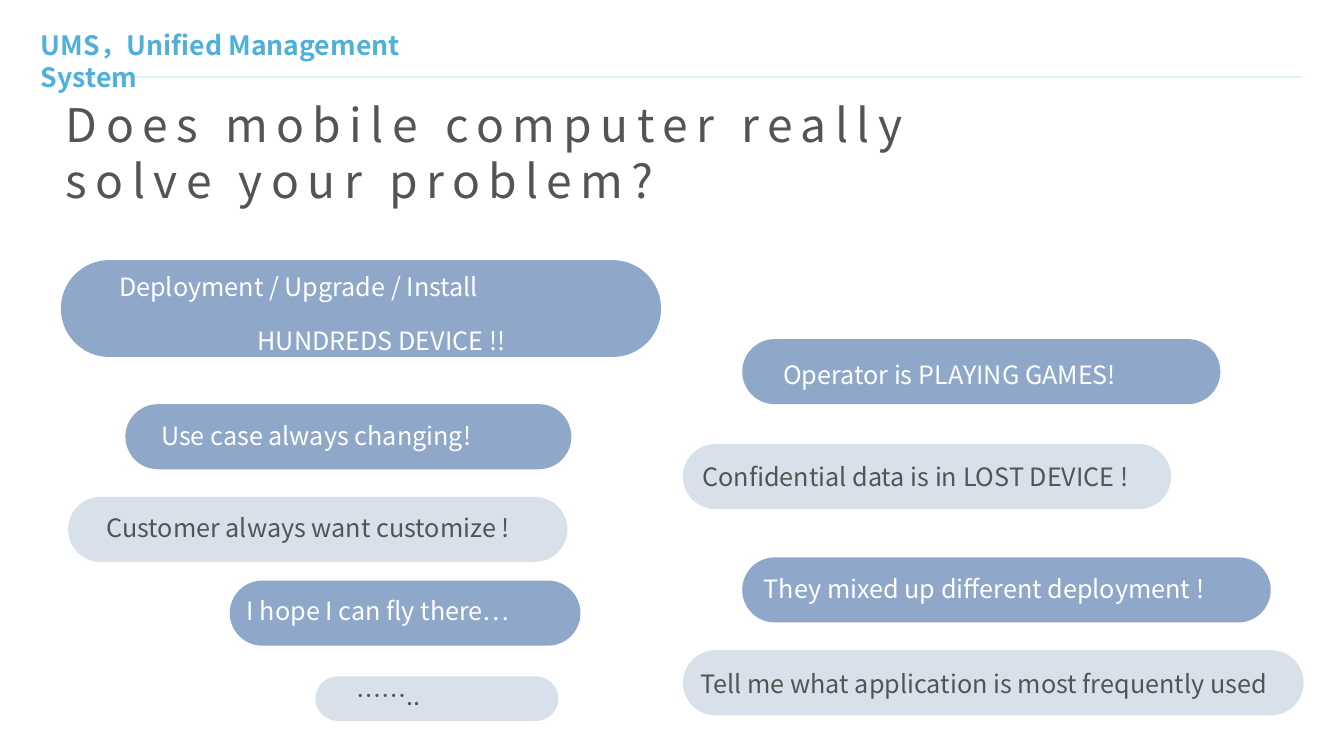
from dataclasses import dataclass
from typing import Optional

from lxml import etree
from pptx import Presentation
from pptx.dml.color import RGBColor
from pptx.enum.shapes import MSO_CONNECTOR, MSO_SHAPE
from pptx.enum.text import MSO_ANCHOR, PP_ALIGN
from pptx.oxml.ns import qn
from pptx.util import Cm, Pt

PILL_SHAPE = MSO_SHAPE.ROUNDED_RECTANGLE
STRAIGHT = MSO_CONNECTOR.STRAIGHT
LEFT, CENTER = PP_ALIGN.LEFT, PP_ALIGN.CENTER
TOP, MIDDLE = MSO_ANCHOR.TOP, MSO_ANCHOR.MIDDLE

FONT = "Noto Sans CJK SC"
BLUE, PALE = "8FA7C9", "D8E1EA"
WHITE, GRAY = "FFFFFF", "545454"
HEADER_BLUE, RULE_BLUE = "50B0DA", "E2F2FA"
PILL_HEIGHT, LABEL_HEIGHT = 3.28, 1.8
LABEL_SIZE = 36
INDENT = 0.76


@dataclass
class Box:
    """A frame measured in centimetres."""
    left: float
    top: float
    width: float
    height: float = PILL_HEIGHT

    def lengths(self) -> tuple:
        return Cm(self.left), Cm(self.top), Cm(self.width), Cm(self.height)


@dataclass
class Complaint:
    lines: list[str]
    fill: str
    pill: Box
    label: Optional[Box] = None  # without one, the text sits in the pill
    indent: float = 0


COMPLAINTS = [
    Complaint(["Deployment / Upgrade / Install", "HUNDREDS DEVICE !!"], BLUE,
              Box(3.07, 13.11, 30.25, 4.88), Box(5.05, 13.56, 28.35, 3.61), 0.7),
    Complaint(["Confidential data is in LOST DEVICE !"], PALE,
              Box(34.42, 22.38, 24.61), indent=0.25),
    Complaint(["Use case always changing!"], BLUE,
              Box(6.32, 20.37, 22.48), Box(7.11, 21.06, 23.8, LABEL_HEIGHT), INDENT),
    Complaint(["Customer always want customize !"], PALE,
              Box(3.43, 25.04, 25.17), Box(5.11, 25.7, 26.37, LABEL_HEIGHT)),
    Complaint(["…….."], PALE,
              Box(15.9, 34.09, 12.24, 2.24), Box(16.94, 34.14, 14.53, 1.52), INDENT),
    Complaint(["They mixed up different deployment !"], BLUE,
              Box(37.41, 28.09, 26.64), Box(37.49, 28.78, 31.19, LABEL_HEIGHT), INDENT),
    Complaint(["Operator is PLAYING GAMES!"], BLUE,
              Box(37.41, 17.09, 24.1), Box(39.22, 17.98, 29.41, LABEL_HEIGHT)),
    Complaint(["I hope I can fly there…"], BLUE,
              Box(11.58, 29.26, 17.68), Box(12.19, 29.9, 18.72, LABEL_HEIGHT)),
    Complaint(["Tell me what application is most frequently used"], PALE,
              Box(34.42, 32.77, 31.29), Box(35.05, 33.58, 32.79, LABEL_HEIGHT)),
]


def color(hex_value: str) -> RGBColor:
    return RGBColor.from_string(hex_value)


def write(shape, lines: list[str], size: float, text_color: str, bold: bool = False,
          indent: float = 0, anchor=TOP, tracking: float = 0) -> None:
    """Fill a shape with text; any line after the first is centred."""
    text_frame = shape.text_frame
    text_frame.text = "\n".join(lines)
    text_frame.word_wrap = True
    text_frame.vertical_anchor = anchor
    for index, paragraph in enumerate(text_frame.paragraphs):
        paragraph.alignment = CENTER if index else LEFT
        if index:
            paragraph.space_before = Pt(34)
        elif indent:
            paragraph._p.get_or_add_pPr().set("marL", str(Cm(indent)))
        for run in paragraph.runs:
            run.font.name = FONT
            run.font.size = Pt(size)
            run.font.bold = bold
            run.font.color.rgb = color(text_color)
            if tracking:
                run._r.get_or_add_rPr().set("spc", str(round(tracking * 100)))


def add_pill(shapes, box: Box, fill: str):
    pill = shapes.add_shape(PILL_SHAPE, *box.lengths())
    pill.adjustments[0] = 0.5
    pill.shadow.inherit = False
    pill.fill.solid()
    pill.fill.fore_color.rgb = color(fill)
    pill.line.fill.background()
    return pill


def add_complaint(slide, complaint: Complaint) -> None:
    text_color = WHITE if complaint.fill == BLUE else GRAY
    if complaint.label is None:
        target, anchor = add_pill(slide.shapes, complaint.pill, complaint.fill), MIDDLE
    else:
        group = slide.shapes.add_group_shape()
        add_pill(group.shapes, complaint.pill, complaint.fill)
        target, anchor = group.shapes.add_textbox(*complaint.label.lengths()), TOP
    write(target, complaint.lines, LABEL_SIZE, text_color,
          indent=complaint.indent, anchor=anchor)


def add_rule(slide, left: float, right: float, top: float) -> None:
    rule = slide.shapes.add_connector(STRAIGHT, Cm(left), Cm(top), Cm(right), Cm(top))
    rule.line.color.rgb = color(RULE_BLUE)
    rule.line.width = Pt(2)
    etree.SubElement(rule._element.spPr, qn("a:effectLst"))


def main() -> None:
    presentation = Presentation()
    presentation.slide_width, presentation.slide_height = Cm(67.74), Cm(38.1)
    slide = presentation.slides.add_slide(presentation.slide_layouts[6])

    # Header above a thin rule
    add_rule(slide, 2.11, 65.61, 3.89)
    header = slide.shapes.add_textbox(*Box(1.93, 1.32, 22.35, 1.88).lengths())
    write(header, ["UMS，Unified Management System"], 38, HEADER_BLUE, bold=True)
    header.text_frame.margin_left = header.text_frame.margin_right = Cm(0.13)

    # Title
    title = slide.shapes.add_textbox(*Box(3.07, 4.75, 46.13, 5.89).lengths())
    write(title, ["Does mobile computer really solve your problem?"], 66, GRAY,
          tracking=12.1)

    # Complaint pills
    for complaint in COMPLAINTS:
        add_complaint(slide, complaint)

    presentation.save("out.pptx")


if __name__ == "__main__":
    main()
